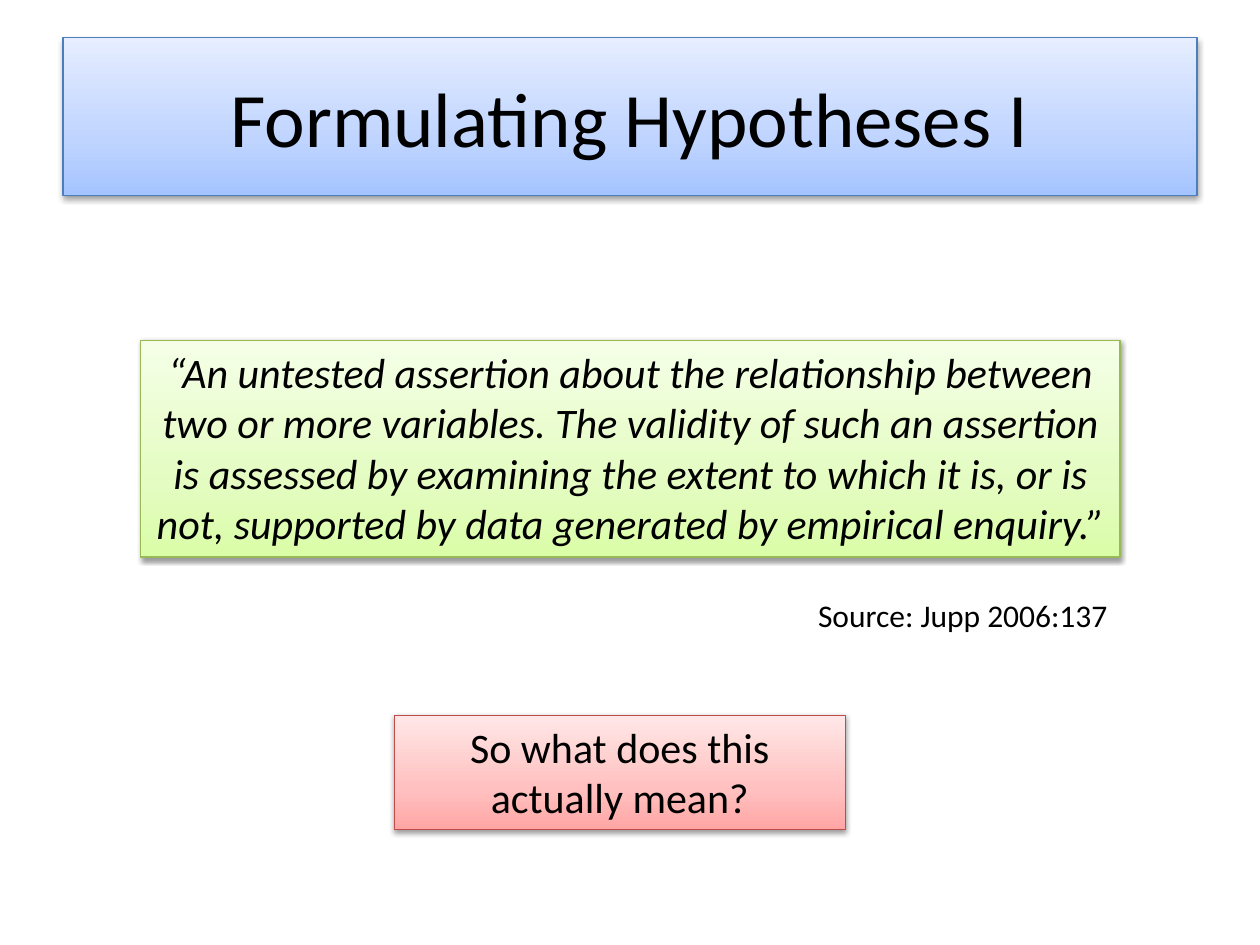
"""Build the slide on formulating hypotheses."""
from copy import deepcopy
from dataclasses import dataclass

from lxml import etree
from pptx import Presentation
from pptx.dml.color import RGBColor
from pptx.enum import shapes, text
from pptx.oxml.ns import qn
from pptx.util import Cm, Pt

HUES = {
    "ink": "000000",
    "blue": ("A4C4FF", "BFD4FF", "E6EEFF"),
    "blue line": "4B7EBC",
    "green": ("DAFDA7", "E4FCC2", "F5FFE7"),
    "green line": "98B955",
    "red": ("FFA6A5", "FFC0BF", "FFE7E7"),
    "red line": "BF4C48",
}
STOPS = (0, 0.35, 1)
ALIGN = text.PP_ALIGN


@dataclass
class Panel:
    words: str
    left: float
    top: float
    width: float
    height: float
    size: int
    hue: str = ""
    italic: bool = False
    align: ALIGN = ALIGN.CENTER

    def frame(self) -> tuple:
        return Cm(self.left), Cm(self.top), Cm(self.width), Cm(self.height)


TITLE = Panel("Formulating Hypotheses I", 1.27, 0.76, 22.86, 3.18, 44, "blue")
PANELS = (
    Panel("“An untested assertion about the relationship between two or more "
          "variables. The validity of such an assertion is assessed by "
          "examining the extent to which it is, or is not, supported by data "
          "generated by empirical enquiry.”",
          2.84, 6.86, 19.74, 4.37, 24, "green", italic=True),
    Panel("Source: Jupp 2006:137", 14.33, 11.89, 8.25, 1.02, 18,
          align=ALIGN.RIGHT),
    Panel("So what does this actually mean?",
          7.95, 14.42, 9.09, 2.31, 24, "red"),
)


def shade(shape) -> None:
    """Give the shape a soft shadow that falls straight down."""
    shape.shadow.inherit = False
    effect = shape._element.spPr.find(qn("a:effectLst"))
    outer = etree.SubElement(effect, qn("a:outerShdw"), blurRad=str(Pt(3.1)),
                             dist=str(Pt(1.6)), dir="5400000", rotWithShape="0")
    tone = etree.SubElement(outer, qn("a:srgbClr"), val=HUES["ink"])
    etree.SubElement(tone, qn("a:alpha"), val="38000")


def paint(shape, hue: str) -> None:
    """Fill the shape with a three-stop gradient, and add outline and shadow."""
    shape.fill.gradient()
    shape.fill.gradient_angle = 90
    stops = shape._element.spPr.find(qn("a:gradFill")).find(qn("a:gsLst"))
    stops.append(deepcopy(stops[-1]))
    for stop, place, tone in zip(shape.fill.gradient_stops, STOPS, HUES[hue]):
        stop.position = place
        stop.color.rgb = RGBColor.from_string(tone)
    shape.line.color.rgb = RGBColor.from_string(HUES[f"{hue} line"])
    shape.line.width = Pt(0.75)
    shade(shape)


def write(shape, panel: Panel) -> None:
    """Set the panel's words and format them."""
    frame = shape.text_frame
    frame.text = panel.words
    frame.word_wrap = True
    para = frame.paragraphs[0]
    para.alignment = panel.align
    font = para.runs[0].font
    font.name, font.size = "Calibri", Pt(panel.size)
    font.color.rgb = RGBColor.from_string(HUES["ink"])
    if panel.italic:
        font.italic = True


def draw(slide, panel: Panel) -> None:
    """Draw a panel, filled if it has a hue."""
    if panel.hue:
        shape = slide.shapes.add_shape(shapes.MSO_SHAPE.RECTANGLE,
                                       *panel.frame())
        paint(shape, panel.hue)
    else:
        shape = slide.shapes.add_textbox(*panel.frame())
    write(shape, panel)
    shape.text_frame.vertical_anchor = text.MSO_ANCHOR.TOP
    shape.text_frame.auto_size = text.MSO_AUTO_SIZE.SHAPE_TO_FIT_TEXT


def main() -> None:
    """Build and save the slide."""
    deck = Presentation()
    deck.slide_width, deck.slide_height = Cm(25.4), Cm(19.05)
    slide = deck.slides.add_slide(deck.slide_layouts[5])
    title = slide.shapes.title
    title.left, title.top, title.width, title.height = TITLE.frame()
    paint(title, TITLE.hue)
    write(title, TITLE)
    title.text_frame.vertical_anchor = text.MSO_ANCHOR.MIDDLE
    for panel in PANELS:
        draw(slide, panel)
    deck.save("out.pptx")


if __name__ == "__main__":
    main()
